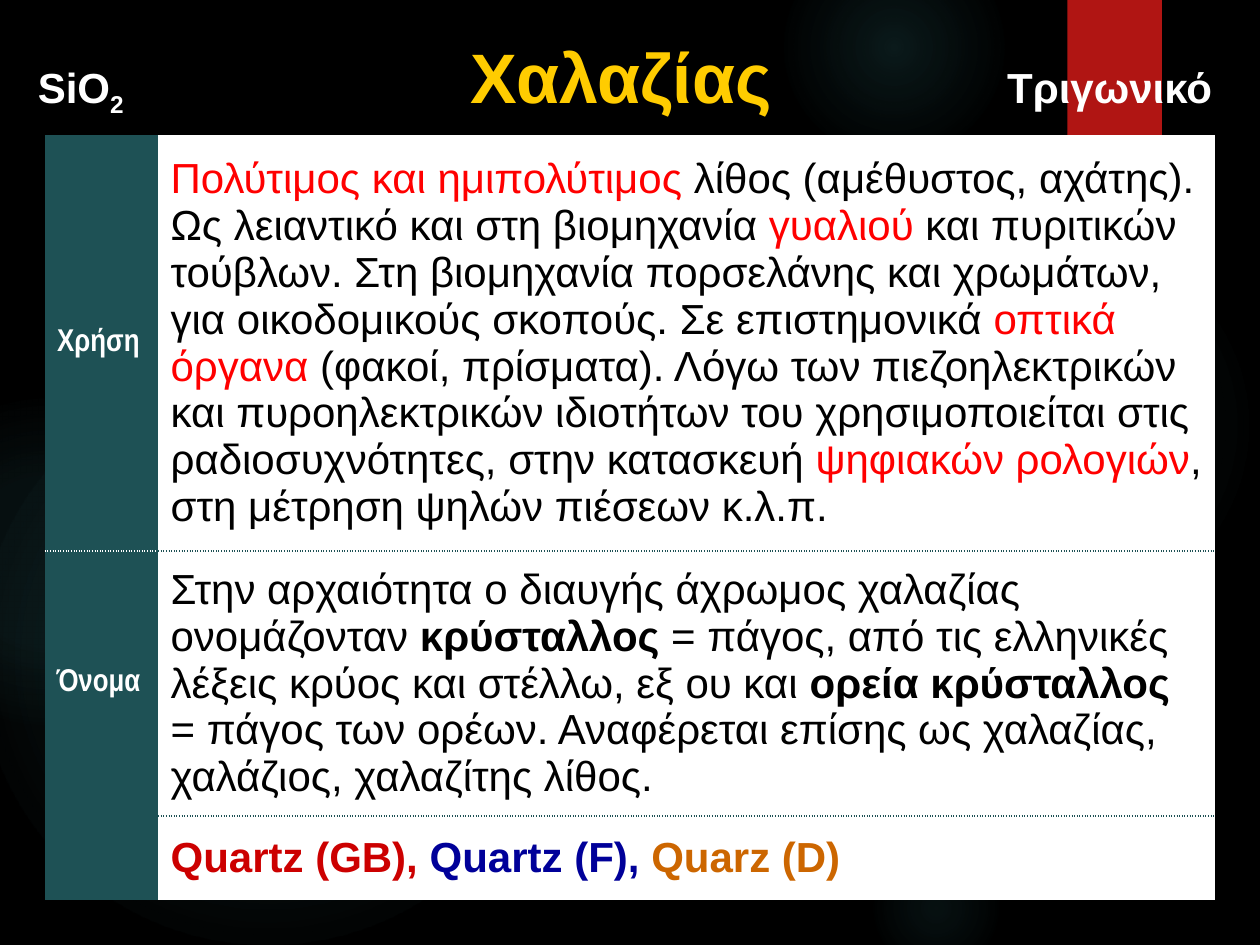
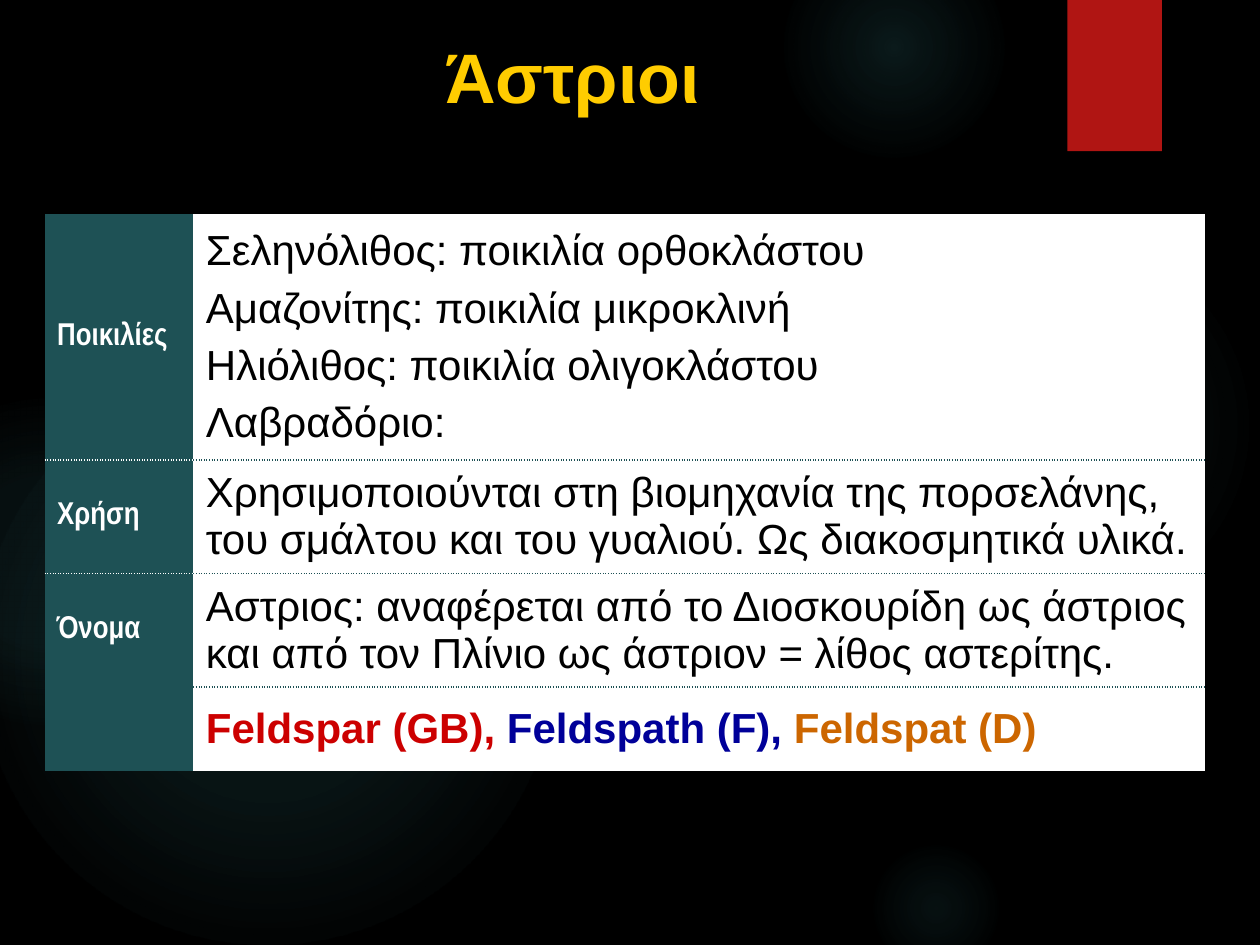
from lxml import etree
from pptx import Presentation
from pptx.dml.color import RGBColor
from pptx.enum.shapes import MSO_SHAPE
from pptx.enum.text import MSO_ANCHOR, MSO_AUTO_SIZE, PP_ALIGN
from pptx.oxml import parse_xml
from pptx.oxml.ns import nsdecls, qn
from pptx.util import Pt

BLACK = RGBColor(0x00, 0x00, 0x00)
WHITE = RGBColor(0xFF, 0xFF, 0xFF)
GOLD = RGBColor(0xFF, 0xCC, 0x00)
RED = RGBColor(0xFF, 0x00, 0x00)
TEAL = RGBColor(0x1E, 0x51, 0x55)
RIBBON = RGBColor(0xB0, 0x15, 0x13)
GLOW = RGBColor(0x50, 0xB9, 0xC1)
ENGLISH = RGBColor(0xCC, 0x00, 0x00)
FRENCH = RGBColor(0x00, 0x00, 0x99)
GERMAN = RGBColor(0xCC, 0x66, 0x00)

FONT = "Arial"
LABEL_FONT = "Arial Narrow"
TAB = "\t"
TITLE_BOX = (14.4, 13, 692, 58.3)
RIBBON_BOX = (610, 0, 54, 86.4)
GLOWS = [
    (496, 132, 222, ((0, 7), (36, 6), (69, 0))),
    (448, -36, 126, ((0, 14), (36, 7), (73, 0))),
    (496, 480, 78, ((0, 9), (36, 5), (66, 0))),
    (-12, 210, 330, ((0, 11), (36, 10), (75, 0))),
    (-66, 228, 186, ((0, 8), (36, 8), (72, 0))),
]


def add_plain_shape(slide, kind, box):
    """Add a preset shape without line or shadow."""
    sp = slide.shapes.add_shape(kind, *map(Pt, box))
    sp.shadow.inherit = False
    sp.line.fill.background()
    return sp


def fill_glow(sp, stops):
    """Fill a shape with a round gradient of (position, opacity) stops."""
    marks = "".join(
        f'<a:gs pos="{pos * 1000}"><a:srgbClr val="{GLOW}">'
        f'<a:alpha val="{alpha * 1000}"/></a:srgbClr></a:gs>'
        for pos, alpha in stops)
    grad = parse_xml(
        f'<a:gradFill {nsdecls("a")} rotWithShape="1"><a:gsLst>{marks}</a:gsLst>'
        '<a:path path="circle"><a:fillToRect l="50000" t="50000" r="50000" b="50000"/>'
        '</a:path></a:gradFill>')
    sp._element.spPr.find(qn("a:prstGeom")).addnext(grad)


def add_backdrop(slide):
    """Draw the glows and the red ribbon behind the content."""
    for left, top, size, stops in GLOWS:
        fill_glow(add_plain_shape(slide, MSO_SHAPE.OVAL, (left, top, size, size)), stops)
    ribbon = add_plain_shape(slide, MSO_SHAPE.RECTANGLE, RIBBON_BOX)
    ribbon.fill.solid()
    ribbon.fill.fore_color.rgb = RIBBON


def add_run(p, text, size, color, bold, font=FONT):
    """Append one formatted run to a paragraph."""
    r = p.add_run()
    r.text = text
    r.font.size = Pt(size)
    r.font.bold = bold
    r.font.color.rgb = color
    r.font.name = font
    return r


def add_text_shadow(r):
    """Give a run a soft dark shadow."""
    shadow = parse_xml(
        f'<a:effectLst {nsdecls("a")}><a:outerShdw blurRad="38100" dist="38100" dir="2700000">'
        '<a:srgbClr val="000000"/></a:outerShdw></a:effectLst>')
    r._r.get_or_add_rPr().find(qn("a:solidFill")).addnext(shadow)


def place_title(slide, box, runs, align, tabs):
    """Place the title placeholder in front and fill it with tabbed runs."""
    title = slide.shapes.title
    slide.shapes._spTree.append(title._element)
    title.left, title.top, title.width, title.height = map(Pt, box)
    tf = title.text_frame
    tf.word_wrap = True
    tf.auto_size = MSO_AUTO_SIZE.SHAPE_TO_FIT_TEXT
    tf.vertical_anchor = MSO_ANCHOR.BOTTOM
    p = tf.paragraphs[0]
    p.alignment = align
    tab_list = etree.SubElement(p._p.get_or_add_pPr(), qn("a:tabLst"))
    for pos, side in tabs:
        etree.SubElement(tab_list, qn("a:tab"), pos=str(Pt(pos)), algn=side)
    for text, size, color, baseline in runs:
        r = add_run(p, text, size, color, True)
        if baseline:
            r._r.get_or_add_rPr().set("baseline", str(baseline * 1000))
        add_text_shadow(r)


def set_borders(cell, top, bottom):
    """Draw dotted top and bottom borders where a colour is given."""
    tc_pr = cell._tc.get_or_add_tcPr()
    for side, color in (("L", None), ("R", None), ("T", top), ("B", bottom)):
        ln = etree.SubElement(tc_pr, qn(f"a:ln{side}"), w=str(Pt(1)))
        if color is None:
            etree.SubElement(ln, qn("a:noFill"))
        else:
            fill = etree.SubElement(ln, qn("a:solidFill"))
            etree.SubElement(fill, qn("a:srgbClr"), val=str(color))
            etree.SubElement(ln, qn("a:prstDash"), val="sysDot")


def fill_cell(cell, color, paragraphs, size, font, gap):
    """Fill a cell with a colour and paragraphs of (text, colour, bold) runs."""
    cell.fill.solid()
    cell.fill.fore_color.rgb = color
    cell.vertical_anchor = MSO_ANCHOR.MIDDLE
    tf = cell.text_frame
    for i, runs in enumerate(paragraphs):
        p = tf.add_paragraph() if i else tf.paragraphs[0]
        p.space_before = Pt(gap)
        for text, ink, bold in runs:
            add_run(p, text, size, ink, bold, font)


def add_fact_table(slide, left, top, widths, rows):
    """Add the table of labels and facts; rows are (height, label, paragraphs)."""
    height = sum(row[0] for row in rows)
    frame = slide.shapes.add_table(
        len(rows), 2, Pt(left), Pt(top), Pt(sum(widths)), Pt(height))
    table = frame.table
    table.first_row = table.horz_banding = False
    for col, width in zip(table.columns, widths):
        col.width = Pt(width)
    label_lines = [None] + [WHITE if row[1] else None for row in rows[1:]] + [None]
    fact_lines = [None] + [TEAL] * (len(rows) - 1) + [None]
    for i, (row_height, label, facts) in enumerate(rows):
        table.rows[i].height = Pt(row_height)
        label_cell, fact_cell = table.cell(i, 0), table.cell(i, 1)
        set_borders(label_cell, *label_lines[i:i + 2])
        set_borders(fact_cell, *fact_lines[i:i + 2])
        labels = [[(label, WHITE, True)]] if label else []
        fill_cell(label_cell, TEAL, labels, 18, LABEL_FONT, 4)
        fill_cell(fact_cell, WHITE, facts, 24, FONT, 6 if len(facts) > 1 else 4)


def plain(text):
    """Return a paragraph of one black run."""
    return [(text, BLACK, False)]


def translations(english, french, german):
    """Return the one-paragraph cell with the name in three languages."""
    return [[(f"{english} (GB), ", ENGLISH, True),
             (f"{french} (F), ", FRENCH, True),
             (f"{german} (D)", GERMAN, True)]]


def add_mineral_slide(prs, title_runs, align, tabs, top, widths, rows):
    """Add one mineral slide with backdrop, title and fact table."""
    slide = prs.slides.add_slide(prs.slide_layouts[5])
    add_backdrop(slide)
    place_title(slide, TITLE_BOX, title_runs, align, tabs)
    add_fact_table(slide, 25.5, top, widths, rows)


def add_quartz(prs):
    """Add the slide on quartz."""
    title = [("SiO", 24, WHITE, 0), ("2 ", 24, WHITE, -25), (TAB, 42, WHITE, 0),
             ("Χαλαζίας", 40, GOLD, 0), (TAB, 42, WHITE, 0), ("Τριγωνικό", 24, WHITE, 0)]
    uses = [
        ("Πολύτιμος και ημιπολύτιμος ", RED, False),
        ("λίθος (αμέθυστος, αχάτης). Ως λειαντικό και στη βιομηχανία ", BLACK, False),
        ("γυαλιού", RED, False),
        (" και πυριτικών τούβλων. Στη βιομηχανία πορσελάνης και χρωμάτων, για "
         "οικοδομικούς σκοπούς. Σε επιστημονικά ", BLACK, False),
        ("οπτικά όργανα", RED, False),
        (" (φακοί, πρίσματα). Λόγω των πιεζοηλεκτρικών και πυροηλεκτρικών ιδιοτήτων "
         "του χρησιμοποιείται στις ραδιοσυχνότητες, στην κατασκευή ", BLACK, False),
        ("ψηφιακών ρολογιών", RED, False),
        (", στη μέτρηση ψηλών πιέσεων κ.λ.π.", BLACK, False),
    ]
    name = [
        ("Στην αρχαιότητα ο διαυγής άχρωμος χαλαζίας ονομάζονταν ", BLACK, False),
        ("κρύσταλλος", BLACK, True),
        (" = πάγος, από τις ελληνικές λέξεις κρύος και στέλλω, εξ ου και ", BLACK, False),
        ("ορεία κρύσταλλος ", BLACK, True),
        ("= πάγος των ορέων. Αναφέρεται επίσης ως χαλαζίας, χαλάζιος, χαλαζίτης λίθος.",
         BLACK, False),
    ]
    rows = [(237.2, "Χρήση", [uses]), (151.4, "Όνομα", [name]),
            (48, "", translations("Quartz", "Quartz", "Quarz"))]
    add_mineral_slide(prs, title, PP_ALIGN.LEFT, [(247, "l"), (671, "r")],
                      77.2, (64.8, 604), rows)


def add_feldspars(prs):
    """Add the slide on feldspars."""
    title = [("Άστριοι", 40, GOLD, 0), (TAB, 42, WHITE, 0)]
    varieties = [plain(text) for text in (
        "Σεληνόλιθος: ποικιλία ορθοκλάστου", "Αμαζονίτης: ποικιλία μικροκλινή",
        "Ηλιόλιθος: ποικιλία ολιγοκλάστου", "Λαβραδόριο:")]
    uses = plain("Χρησιμοποιούνται στη βιομηχανία της πορσελάνης, του σμάλτου και του "
                 "γυαλιού. Ως διακοσμητικά υλικά.")
    name = plain("Αστριος: αναφέρεται από το Διοσκουρίδη ως άστριος και από τον Πλίνιο "
                 "ως άστριον = λίθος αστερίτης.")
    rows = [(140.4, "Ποικιλίες", varieties), (64.8, "Χρήση", [uses]),
            (64.8, "Όνομα", [name]),
            (48, "", translations("Feldspar", "Feldspath", "Feldspat"))]
    add_mineral_slide(prs, title, PP_ALIGN.CENTER, [(211.7, "l"), (671, "r")],
                      122.4, (85, 578), rows)


def main():
    """Build and save the presentation."""
    prs = Presentation()
    prs.slide_width, prs.slide_height = Pt(720), Pt(540)
    background = prs.slide_master.background.fill
    background.solid()
    background.fore_color.rgb = BLACK
    add_quartz(prs)
    add_feldspars(prs)
    prs.save("out.pptx")


if __name__ == "__main__":
    main()
